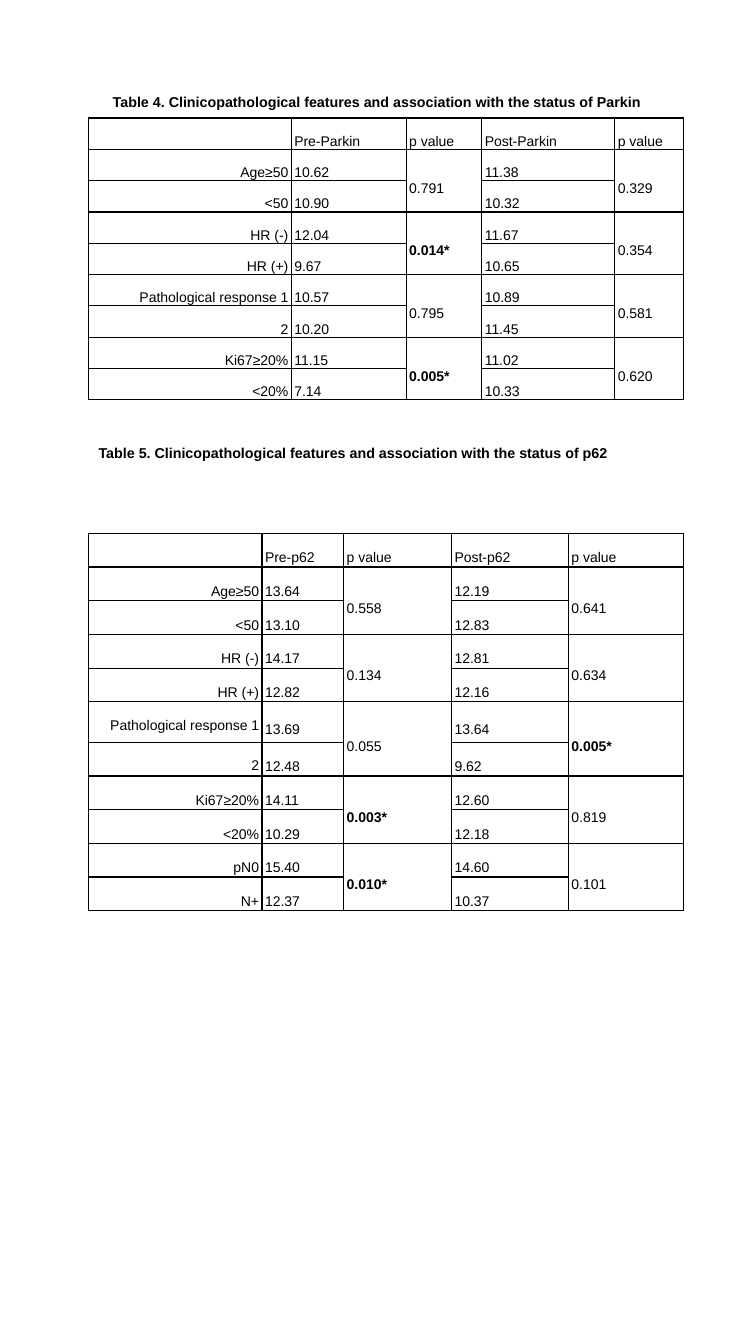
from dataclasses import dataclass
from lxml.etree import SubElement
from pptx import Presentation
from pptx.dml.color import RGBColor
from pptx.enum.text import MSO_ANCHOR as Anchor, PP_ALIGN as Align
from pptx.oxml.ns import qn
from pptx.util import Inches, Pt


@dataclass(frozen=True)
class Theme:
    font: str = "Arial"
    ink: str = "000000"
    caption_size: float = 10.2
    cell_size: float = 10
    border: float = 1


theme = Theme()


def style_text(paragraph, size, bold, spacing):
    paragraph.line_spacing = spacing
    font = paragraph.font
    font.name, font.size, font.bold = theme.font, Pt(size), bold
    font.color.rgb = RGBColor.from_string(theme.ink)


def add_borders(cell):
    properties = cell._tc.get_or_add_tcPr()
    for side in ("a:lnL", "a:lnR", "a:lnT", "a:lnB"):
        line = SubElement(properties, qn(side), w=str(Pt(theme.border)))
        fill = SubElement(line, qn("a:solidFill"))
        SubElement(fill, qn("a:srgbClr"), val=theme.ink)


# Each feature: two rows of (label, before, after), then the two p values they share.
parkin_features = [
    (("Age≥50", "10.62", "11.38"), ("<50", "10.90", "10.32"), "0.791", "0.329"),
    (("HR (-)", "12.04", "11.67"), ("HR (+)", "9.67", "10.65"), "0.014*", "0.354"),
    (("Pathological response 1", "10.57", "10.89"), ("2", "10.20", "11.45"), "0.795", "0.581"),
    (("Ki67≥20%", "11.15", "11.02"), ("<20%", "7.14", "10.33"), "0.005*", "0.620"),
]
p62_features = [
    (("Age≥50", "13.64", "12.19"), ("<50", "13.10", "12.83"), "0.558", "0.641"),
    (("HR (-)", "14.17", "12.81"), ("HR (+)", "12.82", "12.16"), "0.134", "0.634"),
    (("Pathological response 1", "13.69", "13.64"), ("2", "12.48", "9.62"), "0.055", "0.005*"),
    (("Ki67≥20%", "14.11", "12.60"), ("<20%", "10.29", "12.18"), "0.003*", "0.819"),
    (("pN0", "15.40", "14.60"), ("N+", "12.37", "10.37"), "0.010*", "0.101"),
]
table_left, table_width = 0.88, 5.9
caption_height = 0.29
caption_text = "Table {}. Clinicopathological features and association with the status of {}"
# number, marker, caption (left, top, width), table top, column widths, row height, tall rows, features
sections = [
    (4, "Parkin", (1.02, 0.84, 5.65), 1.17, (2.01, 1.14, 0.75, 1.32, 0.68),
     0.29, {}, parkin_features),
    (5, "p62", (table_left, 4.32, table_width), 5.29, (1.72, 0.81, 1.07, 1.16, 1.14),
     0.3, {5: 0.4}, p62_features),
]

presentation = Presentation()
presentation.slide_width, presentation.slide_height = Inches(7.5), Inches(13.33)
slide = presentation.slides.add_slide(presentation.slide_layouts[6])

for number, marker, caption_place, top, widths, row_height, tall_rows, features in sections:
    rows = [("", f"Pre-{marker}", "p value", f"Post-{marker}", "p value")]
    for first, second, p_before, p_after in features:
        rows.append((first[0], first[1], p_before, first[2], p_after))
        rows.append((second[0], second[1], "", second[2], ""))

    shape = slide.shapes.add_table(
        len(rows), len(widths), Inches(table_left), Inches(top),
        Inches(table_width), Inches(row_height * len(rows)))
    table = shape.table
    table.first_row = table.horz_banding = False
    for column, width in zip(table.columns, widths):
        column.width = Inches(width)

    for row_index, values in enumerate(rows):
        table.rows[row_index].height = Inches(tall_rows.get(row_index, row_height))
        for column_index, value in enumerate(values):
            cell = table.cell(row_index, column_index)
            add_borders(cell)
            cell.fill.background()
            cell.margin_left = cell.margin_right = Inches(0.03)
            cell.margin_top = cell.margin_bottom = 0
            is_label = column_index == 0
            top_aligned = is_label and row_index in (5, 6)
            cell.vertical_anchor = Anchor.TOP if top_aligned else Anchor.MIDDLE
            if value:
                cell.text = value
                paragraph = cell.text_frame.paragraphs[0]
                paragraph.alignment = Align.RIGHT if is_label else Align.LEFT
                style_text(paragraph, theme.cell_size, value.endswith("*"), 2.0)

    for row_index in range(1, len(rows), 2):
        for column_index in (2, 4):
            table.cell(row_index, column_index).merge(table.cell(row_index + 1, column_index))

    left, caption_top, width = caption_place
    caption = slide.shapes.add_textbox(
        Inches(left), Inches(caption_top), Inches(width), Inches(caption_height))
    caption.text_frame.word_wrap = True
    caption.text_frame.text = caption_text.format(number, marker)
    style_text(caption.text_frame.paragraphs[0], theme.caption_size, True, Pt(14.8))

presentation.save("out.pptx")
